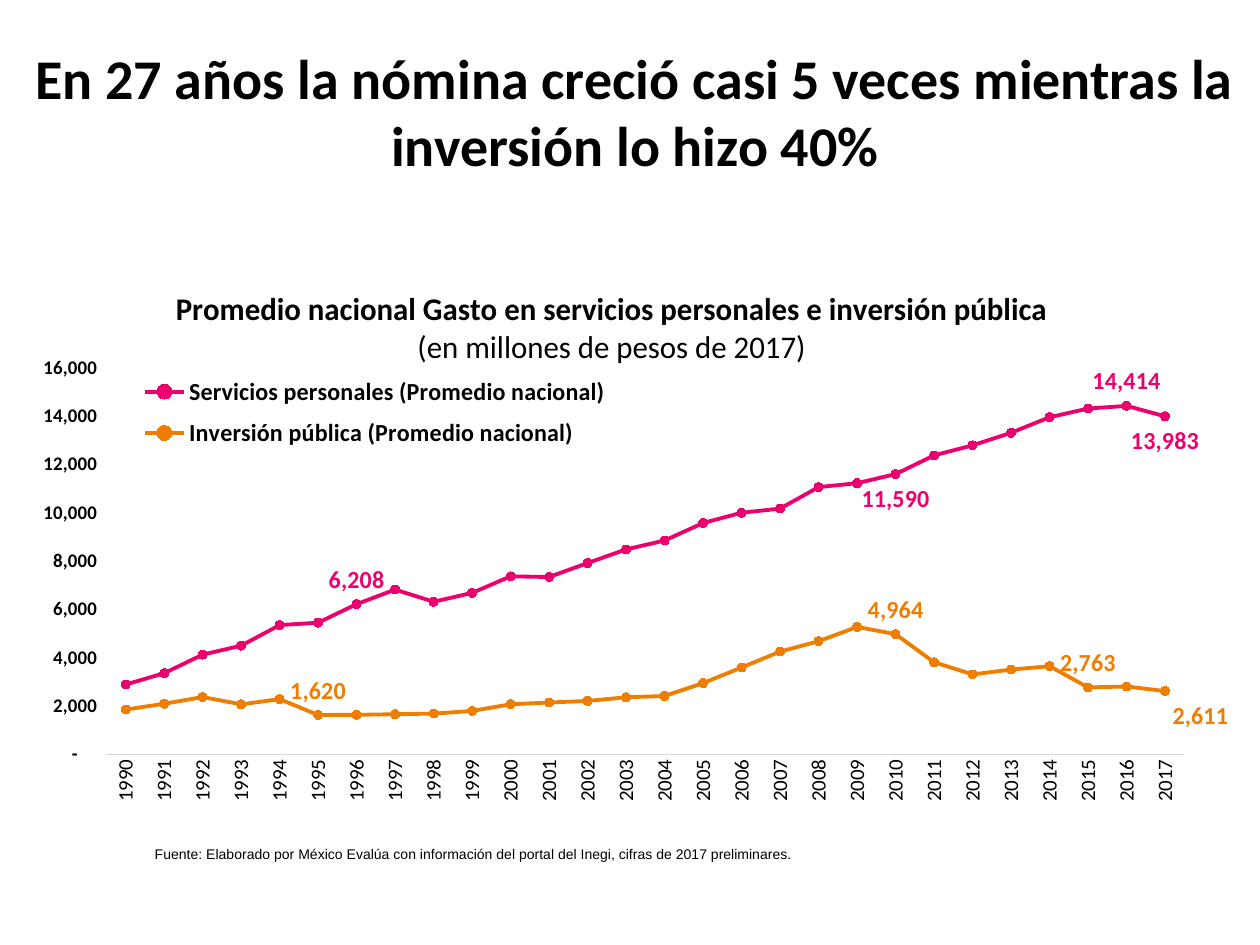
"""Build a slide charting average payroll spending against public investment."""
from dataclasses import dataclass

from lxml import etree
from pptx import Presentation
from pptx import util as u
from pptx.chart.data import CategoryChartData
from pptx.dml.color import RGBColor
from pptx.enum import chart as ch, text
from pptx.oxml import ns

COLORS = {"payroll": "EC006D", "investment": "EE7D00", "text": "000000", "axis": "D9D9D9"}
YEARS = [str(year) for year in range(1990, 2018)]
ABOVE, BELOW = ch.XL_LABEL_POSITION.ABOVE, ch.XL_LABEL_POSITION.BELOW


@dataclass
class Spending:
    name: str
    color: str
    values: list[int]
    labels: dict[str, ch.XL_LABEL_POSITION]


SPENDING = [
    Spending(
        "Servicios personales (Promedio nacional)", COLORS["payroll"],
        [2882, 3350, 4118, 4488, 5340, 5440, 6208, 6809, 6305, 6672, 7358, 7330, 7908, 8473,
         8843, 9567, 9992, 10163, 11053, 11213, 11590, 12363, 12782, 13299, 13944, 14303,
         14414, 13983],
        {"1996": ABOVE, "2010": BELOW, "2016": ABOVE, "2017": BELOW}),
    Spending(
        "Inversión pública (Promedio nacional)", COLORS["investment"],
        [1845, 2085, 2361, 2062, 2275, 1620, 1627, 1652, 1679, 1786, 2065, 2136, 2202, 2354,
         2407, 2939, 3585, 4242, 4674, 5264, 4964, 3803, 3301, 3499, 3638, 2763, 2799, 2611],
        {"1995": ABOVE, "2010": ABOVE, "2015": ABOVE, "2017": BELOW}),
]


def set_font(font, size: float, bold: bool = False, color: str = COLORS["text"],
             face: str = "Calibri") -> None:
    """Apply face, size, weight and colour to a font."""
    font.name, font.size, font.bold = face, u.Pt(size), bold
    font.color.rgb = RGBColor.from_string(color)


def add_run(paragraph, words: str, size: float, **style) -> None:
    """Append one formatted run to a paragraph."""
    run = paragraph.add_run()
    run.text = words
    set_font(run.font, size, **style)


def set_layout(parent, after: str | None, **settings) -> None:
    """Give a chart part a manual layout placed after the named child."""
    for old in parent.findall(ns.qn("c:layout")):
        parent.remove(old)
    layout = etree.Element(ns.qn("c:layout"))
    manual = etree.SubElement(layout, ns.qn("c:manualLayout"))
    for tag, value in settings.items():
        etree.SubElement(manual, ns.qn(f"c:{tag}")).set("val", str(value))
    if after:
        parent.find(ns.qn(after)).addnext(layout)
    else:
        parent.insert(0, layout)


def style_series(series, spending: Spending) -> None:
    """Colour a line with its markers and label the chosen years."""
    color = RGBColor.from_string(spending.color)
    series.smooth = False
    series.format.line.color.rgb = color
    series.format.line.width = u.Pt(2.25)
    series.marker.style, series.marker.size = ch.XL_MARKER_STYLE.CIRCLE, 5
    series.marker.format.fill.solid()
    series.marker.format.fill.fore_color.rgb = color
    series.marker.format.line.color.rgb = color
    series.data_labels.show_value = False
    for year, position in spending.labels.items():
        label = series.points[YEARS.index(year)].data_label
        set_font(label.font, 14, bold=True, color=spending.color)
        label.position = position


def style_axes(chart) -> None:
    """Format the year axis and the amount axis."""
    years, amounts = chart.category_axis, chart.value_axis
    for axis in (years, amounts):
        axis.has_major_gridlines = False
        axis.major_tick_mark = axis.minor_tick_mark = ch.XL_TICK_MARK.NONE
    set_font(years.tick_labels.font, 12)
    years.format.line.color.rgb = RGBColor.from_string(COLORS["axis"])
    years.format.line.width = u.Pt(0.75)
    years_xml = chart.element if hasattr(chart, "element") else chart._chartSpace
    rotation = years_xml.find(f".//{ns.qn('c:catAx')}/{ns.qn('c:txPr')}/{ns.qn('a:bodyPr')}")
    rotation.set("rot", "-5400000")
    rotation.set("vert", "horz")
    set_font(amounts.tick_labels.font, 11, bold=True)
    amounts.tick_labels.number_format = '_-* #,##0_-;\\-* #,##0_-;_-* "-"??_-;_-@_-'
    amounts.tick_labels.number_format_is_linked = False
    amounts.minimum_scale, amounts.maximum_scale, amounts.major_unit = 0, 16000, 2000
    amounts.format.line.fill.background()


def add_spending_chart(slide) -> None:
    """Draw both spending lines with title, legend and labels."""
    data = CategoryChartData(number_format="#,##0")
    data.categories = YEARS
    for spending in SPENDING:
        data.add_series(spending.name, spending.values)
    chart = slide.shapes.add_chart(
        ch.XL_CHART_TYPE.LINE_MARKERS, u.Inches(0.16), u.Inches(2.11),
        u.Inches(9.59), u.Inches(4.39), data).chart
    set_font(chart.font, 10)
    chart.plots[0].vary_by_categories = False

    chart.has_title = True
    heading = chart.chart_title.text_frame
    add_run(heading.paragraphs[0],
            "Promedio nacional Gasto en servicios personales e inversión pública", 18, bold=True)
    add_run(heading.add_paragraph(), "(en millones de pesos de 2017)", 18)

    chart.has_legend = True
    chart.legend.position = ch.XL_LEGEND_POSITION.BOTTOM
    chart.legend.include_in_layout = False
    set_font(chart.legend.font, 14, bold=True)

    style_axes(chart)
    for series, spending in zip(chart.series, SPENDING):
        style_series(series, spending)

    root = chart._chartSpace
    set_layout(root.find(f".//{ns.qn('c:plotArea')}"), None, layoutTarget="inner",
               xMode="edge", yMode="edge", x=0.073, y=0.184, w=0.911, h=0.699)
    set_layout(root.find(f".//{ns.qn('c:legend')}"), "c:legendPos",
               xMode="edge", yMode="edge", x=0.09, y=0.18, w=0.42, h=0.17)
    set_layout(root.findall(f".//{ns.qn('c:dLbl')}")[-1], "c:idx", x=0.03, y=0)


def main() -> None:
    """Assemble and save the slide."""
    deck = Presentation()
    deck.slide_width, deck.slide_height = u.Inches(10), u.Inches(7.5)
    slide = deck.slides.add_slide(deck.slide_layouts[5])

    source = slide.shapes.add_textbox(
        u.Inches(1.13), u.Inches(6.66), u.Inches(8.4), u.Inches(0.24)).text_frame
    source.word_wrap = True
    add_run(source.paragraphs[0],
            "Fuente: Elaborado por México Evalúa con información del portal del Inegi, "
            "cifras de 2017 preliminares.", 8, face="Arial")

    add_spending_chart(slide)

    title = slide.shapes.title
    title.left, title.top = u.Inches(0.16), u.Inches(0.29)
    title.width, title.height = u.Inches(9.76), u.Inches(1.18)
    title.text_frame.auto_size = text.MSO_AUTO_SIZE.NONE
    headline = title.text_frame.paragraphs[0]
    headline.alignment = text.PP_ALIGN.CENTER
    add_run(headline, "En 27 años la nómina creció casi 5 veces mientras la inversión "
            "lo hizo 40%", 32, bold=True)

    deck.save("out.pptx")


if __name__ == "__main__":
    main()
